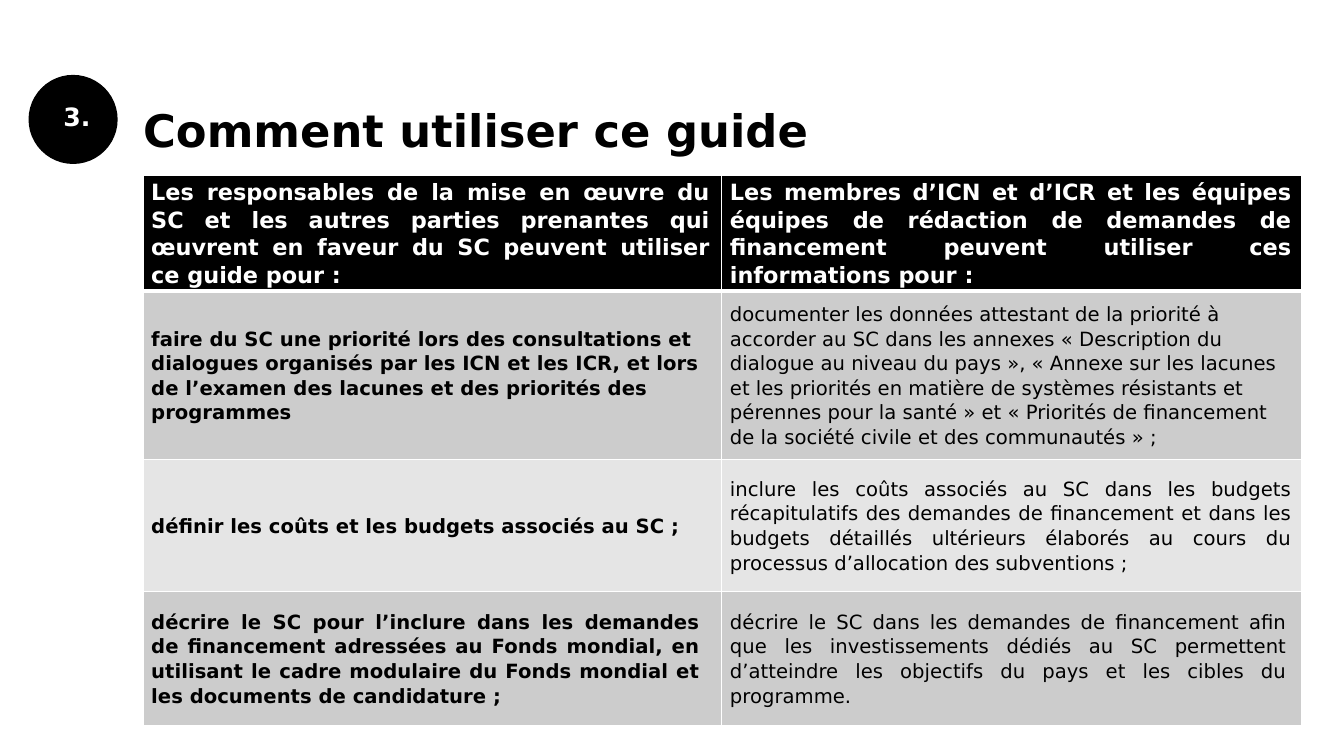
from lxml import etree
from pptx import Presentation
from pptx import util as u
from pptx.dml.color import RGBColor
from pptx.enum import shapes, text
from pptx.oxml.ns import qn

BLACK = RGBColor(0x00, 0x00, 0x00)
WHITE = RGBColor(0xFF, 0xFF, 0xFF)
GREY = RGBColor(0xCC, 0xCC, 0xCC)
PALE_GREY = RGBColor(0xE5, 0xE5, 0xE5)

PX = 9144  # EMU in one px, at 100 px to the inch
LEFT, JUSTIFY = text.PP_ALIGN.LEFT, text.PP_ALIGN.JUSTIFY
MIDDLE = text.MSO_ANCHOR.MIDDLE

COLUMN_WIDTHS = (574, 575)
ROW_HEIGHTS = (115, 167, 131, 133)
ROW_FILLS = (BLACK, GREY, PALE_GREY, GREY)

# Each cell: wording, alignment, right margin
USES = (
    (
        ("Les responsables de la mise en œuvre du SC et les autres parties prenantes "
         "qui œuvrent en faveur du SC peuvent utiliser ce guide pour :", JUSTIFY, 12),
        ("Les membres d’ICN et d’ICR et les équipes équipes de rédaction de demandes "
         "de financement peuvent utiliser ces informations pour :", JUSTIFY, 10),
    ),
    (
        ("faire du SC une priorité lors des consultations et dialogues organisés par "
         "les ICN et les ICR, et lors de l’examen des lacunes et des priorités des "
         "programmes", LEFT, 12),
        ("documenter les données attestant de la priorité à accorder au SC dans les "
         "annexes « Description du dialogue au niveau du pays », « Annexe sur les "
         "lacunes et les priorités en matière de systèmes résistants et pérennes pour "
         "la santé » et « Priorités de financement de la société civile et des "
         "communautés » ;", LEFT, 10),
    ),
    (
        ("définir les coûts et les budgets associés au SC ;", LEFT, 12),
        ("inclure les coûts associés au SC dans les budgets récapitulatifs des "
         "demandes de financement et dans les budgets détaillés ultérieurs élaborés "
         "au cours du processus d’allocation des subventions ;", JUSTIFY, 10),
    ),
    (
        ("décrire le SC pour l’inclure dans les demandes de financement adressées au "
         "Fonds mondial, en utilisant le cadre modulaire du Fonds mondial et les "
         "documents de candidature ;", JUSTIFY, 22),
        ("décrire le SC dans les demandes de financement afin que les investissements "
         "dédiés au SC permettent d’atteindre les objectifs du pays et les cibles du "
         "programme.", JUSTIFY, 15),
    ),
)


def set_all(target, values):
    for name, value in values.items():
        setattr(target, name, value)


class GuideSlide:
    font = "DejaVu Sans"

    def __init__(self, page):
        self.page = page

    def px(self, *lengths):
        return [u.Emu(length * PX) for length in lengths]

    def add_wording(self, frame, wording, size, color, bold=True, **layout):
        para = frame.paragraphs[0]
        set_all(para, layout)
        span = para.add_run()
        span.text = wording
        set_all(span.font, {"name": self.font, "size": u.Pt(size), "bold": bold})
        span.font.color.rgb = color

    def disc(self, *place):
        disc = self.page.shapes.add_shape(shapes.MSO_SHAPE.OVAL, *self.px(*place))
        disc.shadow.inherit = False
        disc.fill.solid()
        disc.fill.fore_color.rgb = BLACK
        disc.line.color.rgb = BLACK
        disc.line.width = u.Pt(1)

    def label(self, place, wording, size, color, frame_format, **layout):
        frame = self.page.shapes.add_textbox(*self.px(*place)).text_frame
        set_all(frame, {"word_wrap": True, **frame_format})
        self.add_wording(frame, wording, size, color, **layout)

    def borders(self, cell, top, bottom):
        """Draw white cell borders; top and bottom are widths in points."""
        properties = cell._tc.get_or_add_tcPr()
        for side, width in (("L", 1), ("R", 1), ("T", top), ("B", bottom)):
            line = etree.SubElement(properties, qn(f"a:ln{side}"), w=str(u.Pt(width)))
            fill = etree.SubElement(line, qn("a:solidFill"))
            etree.SubElement(fill, qn("a:srgbClr"), val=str(WHITE))

    def table(self, left, top, rows):
        place = self.px(left, top, sum(COLUMN_WIDTHS), sum(ROW_HEIGHTS))
        table = self.page.shapes.add_table(
            len(ROW_HEIGHTS), len(COLUMN_WIDTHS), *place).table
        table.horz_banding = False
        for column, width in zip(table.columns, self.px(*COLUMN_WIDTHS)):
            column.width = width
        for row, height in zip(table.rows, self.px(*ROW_HEIGHTS)):
            row.height = height
        for r, row in enumerate(rows):
            for c, (wording, align, margin) in enumerate(row):
                cell = table.cell(r, c)
                left_margin, right_margin = self.px(8, margin)
                set_all(cell, {
                    "margin_left": left_margin, "margin_right": right_margin,
                    "margin_top": 0, "margin_bottom": 0, "vertical_anchor": MIDDLE,
                })
                self.borders(cell, 3 if r == 1 else 1, 3 if r == 0 else 1)
                cell.fill.solid()
                cell.fill.fore_color.rgb = ROW_FILLS[r]
                header = r == 0
                self.add_wording(cell.text_frame, wording, 16 if header else 14,
                                 WHITE if header else BLACK, bold=header or c == 0,
                                 alignment=align, line_spacing=1.07)


def main():
    deck = Presentation()
    set_all(deck, {"slide_width": u.Inches(13.33), "slide_height": u.Inches(7.5)})
    guide = GuideSlide(deck.slides.add_slide(deck.slide_layouts[6]))
    guide.disc(29, 75, 87, 87)
    guide.label((53, 96, 60, 40), "3.", 18, WHITE, {})
    no_margins = dict.fromkeys(
        ("margin_left", "margin_right", "margin_top", "margin_bottom"), 0)
    guide.label((142, 72, 1050, 87), "Comment utiliser ce guide", 32, BLACK,
                {**no_margins, "vertical_anchor": MIDDLE}, line_spacing=1.5)
    guide.table(142, 174, USES)
    deck.save("out.pptx")


if __name__ == "__main__":
    main()
